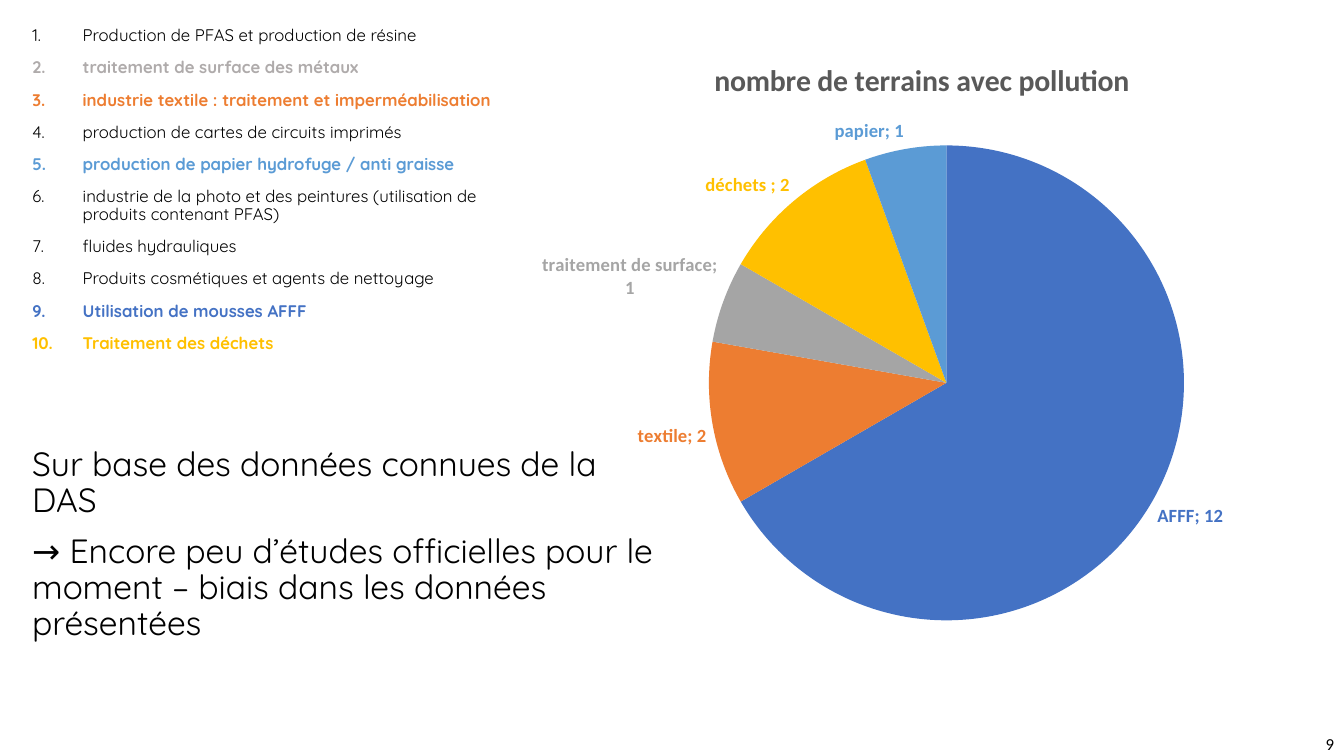
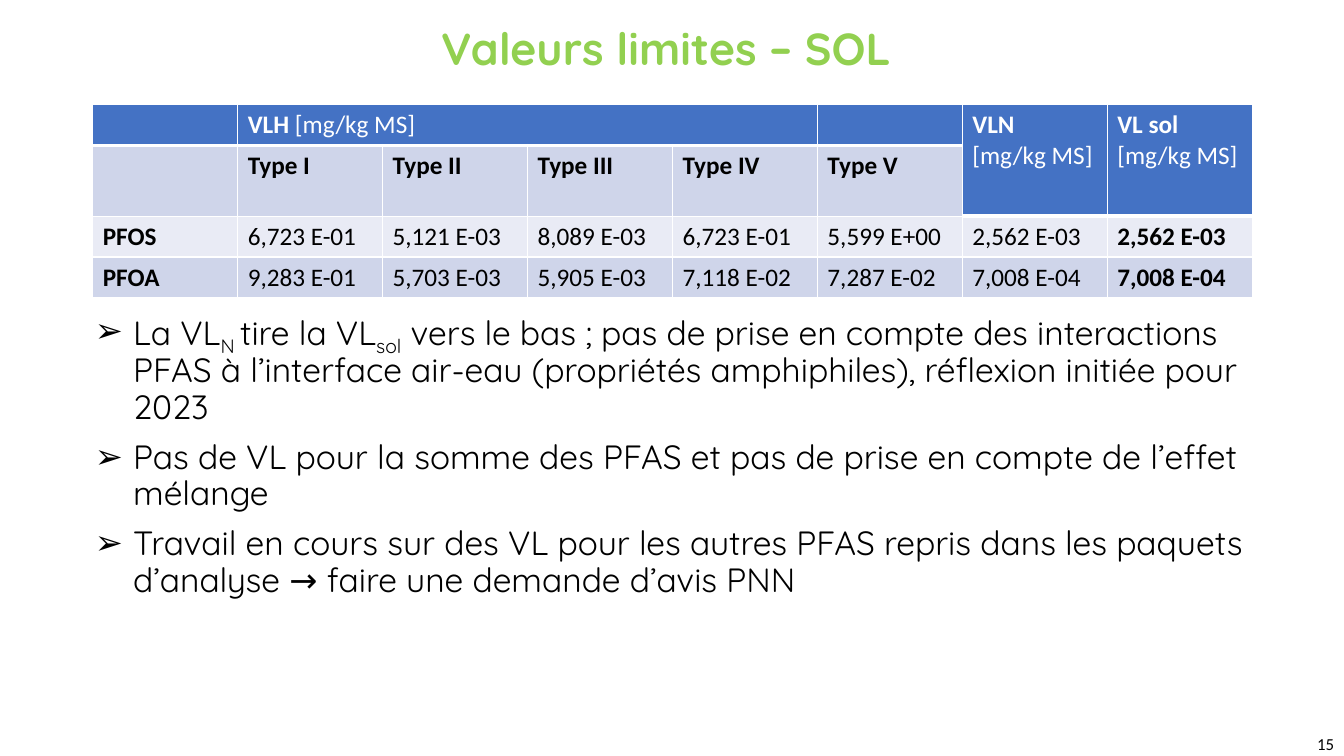
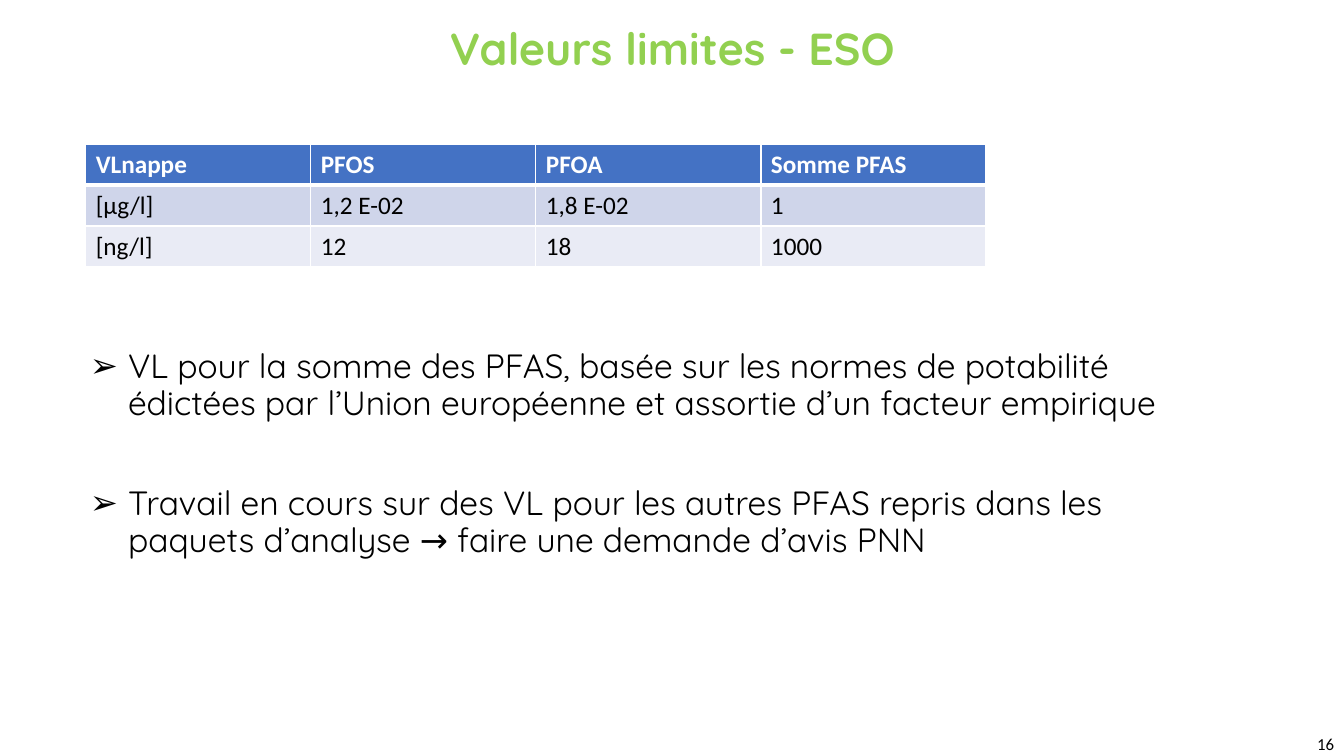
from dataclasses import dataclass

from lxml import etree
from pptx import Presentation
from pptx import util as u
from pptx.chart.data import CategoryChartData
from pptx.dml.color import RGBColor
from pptx.enum import chart as ch, text as tx
from pptx.oxml.ns import qn

HEADING_FONT = "Quicksand"
DATA_FONT = "Calibri"
BLACK, WHITE, GREEN = "000000", "FFFFFF", "92D050"
BLUE, ORANGE, GREY, YELLOW, SKY = "4472C4", "ED7D31", "A5A5A5", "FFC000", "5B9BD5"
TITLE_GREY, LIST_GREY = "595959", "AFABAB"
BAND_DARK, BAND_LIGHT = "CFD5EA", "E9EBF5"
ARROW_BULLET = "➢"


@dataclass(frozen=True)
class Box:
    left: float
    top: float
    width: float
    height: float

    def lengths(self) -> tuple:
        return tuple(u.Inches(v) for v in (self.left, self.top, self.width, self.height))


@dataclass(frozen=True)
class Activity:
    label: str
    color: str = BLACK


@dataclass(frozen=True)
class Sector:
    label: str
    sites: int
    color: str


@dataclass(frozen=True)
class Part:
    """A stretch of text, lowered when it is a subscript."""
    words: str
    subscript: bool = False


@dataclass(frozen=True)
class Heading:
    """A table heading with its unit in regular weight."""
    label: str = ""
    unit: str = ""
    stacked: bool = False


ACTIVITIES = [
    Activity("Production de PFAS et production de résine"),
    Activity("traitement de surface des métaux", LIST_GREY),
    Activity("industrie textile : traitement et imperméabilisation", ORANGE),
    Activity("production de cartes de circuits imprimés"),
    Activity("production de papier hydrofuge / anti graisse", SKY),
    Activity("industrie de la photo et des peintures (utilisation de produits contenant PFAS)"),
    Activity("fluides hydrauliques"),
    Activity("Produits cosmétiques et agents de nettoyage"),
    Activity("Utilisation de mousses AFFF", BLUE),
    Activity("Traitement des déchets", YELLOW),
]
SECTORS = [
    Sector("AFFF", 12, BLUE),
    Sector("textile", 2, ORANGE),
    Sector("traitement de surface", 1, GREY),
    Sector("déchets ", 2, YELLOW),
    Sector("papier", 1, SKY),
]
CHART_TITLE = "nombre de terrains avec pollution"
REMARKS = [
    "Sur base des données connues de la DAS",
    "→ Encore peu d’études officielles pour le moment – biais dans les données présentées",
]
UNIT = "[mg/kg MS]"
SOIL_HEADINGS = [Heading(), Heading("VLH", " " + UNIT), Heading(), Heading(), Heading(),
                 Heading(), Heading("VLN", UNIT, True), Heading("VL sol", UNIT, True)]
SOIL_ROWS = [
    ["", "Type I", "Type II", "Type III", "Type IV", "Type V", "", ""],
    ["PFOS", "6,723 E-01", "5,121 E-03", "8,089 E-03", "6,723 E-01", "5,599 E+00",
     "2,562 E-03", "2,562 E-03"],
    ["PFOA", "9,283 E-01", "5,703 E-03", "5,905 E-03", "7,118 E-02", "7,287 E-02",
     "7,008 E-04", "7,008 E-04"],
]
WATER_HEADINGS = [Heading(name) for name in ("VLnappe", "PFOS", "PFOA", "Somme PFAS")]
WATER_ROWS = [["[µg/l]", "1,2 E-02", "1,8 E-02", "1"], ["[ng/l]", "12", "18", "1000"]]

ONGOING_WORK = [Part("Travail en cours sur des VL pour les autres PFAS repris dans les paquets "
                     "d’analyse → faire une demande d’avis PNN")]
SOIL_POINTS = [
    [Part("La VL"), Part("N ", True), Part("tire la VL"), Part("sol", True),
     Part(" vers le bas ; pas de prise en compte des interactions PFAS à l’interface air-eau "
          "(propriétés amphiphiles), réflexion initiée pour 2023")],
    [Part("Pas de VL pour la somme des PFAS et pas de prise en compte de l’effet mélange")],
    ONGOING_WORK,
]
WATER_POINTS = [
    [Part("VL pour la somme des PFAS, basée sur les normes de potabilité édictées par "
          "l’Union européenne et assortie d’un facteur empirique")],
    ONGOING_WORK,
]


def rgb(color: str) -> RGBColor:
    return RGBColor.from_string(color)


def style_font(font, size: float, color: str, bold: bool = False, name: str = DATA_FONT) -> None:
    font.name, font.size, font.bold = name, u.Pt(size), bold
    font.color.rgb = rgb(color)


def place(shape, box: Box) -> None:
    shape.left, shape.top, shape.width, shape.height = box.lengths()


def space(paragraph, index: int, before: float = 10) -> None:
    paragraph.line_spacing = 0.9
    paragraph.space_before = u.Pt(before if index else 0)


def add_bullet(paragraph, hang: float, symbol: str = "") -> None:
    """Hang a symbol before the paragraph, or its number when no symbol is given."""
    props = paragraph._p.get_or_add_pPr()
    props.set("marL", str(u.Inches(hang)))
    props.set("indent", str(-u.Inches(hang)))
    if symbol:
        etree.SubElement(props, qn("a:buFont")).set("typeface", "Arial")
        etree.SubElement(props, qn("a:buChar")).set("char", symbol)
    else:
        etree.SubElement(props, qn("a:buFont")).set("typeface", "+mj-lt")
        etree.SubElement(props, qn("a:buAutoNum")).set("type", "arabicPeriod")


def paragraph_at(frame, index: int):
    return frame.add_paragraph() if index else frame.paragraphs[0]


def body_frame(slide, box: Box):
    body = slide.placeholders[1]
    place(body, box)
    body.text_frame.word_wrap = True
    body.text_frame.auto_size = tx.MSO_AUTO_SIZE.NONE
    return body.text_frame


def new_slide(deck, number: int, title: str = ""):
    slide = deck.slides.add_slide(deck.slide_layouts[1])
    heading = slide.shapes.title
    if title:
        place(heading, Box(0.92, 0.04, 11.5, 0.93))
        heading.text_frame.text = title
        heading.text_frame.auto_size = tx.MSO_AUTO_SIZE.NONE
        heading.text_frame.vertical_anchor = tx.MSO_ANCHOR.MIDDLE
        line = heading.text_frame.paragraphs[0]
        line.alignment = tx.PP_ALIGN.CENTER
        line.line_spacing = 0.9
        style_font(line.runs[0].font, 32, GREEN, True, HEADING_FONT)
    else:
        heading._element.getparent().remove(heading._element)
    page = slide.shapes.add_textbox(*Box(10.33, 7.23, 3, 0.3).lengths()).text_frame
    page.word_wrap = True
    page.vertical_anchor = tx.MSO_ANCHOR.MIDDLE
    page.text = str(number)
    page.paragraphs[0].alignment = tx.PP_ALIGN.RIGHT
    style_font(page.paragraphs[0].runs[0].font, 12, BLACK)
    return slide


def add_points(slide, box: Box, points: list[list[Part]], gap: float = 10) -> None:
    frame = body_frame(slide, box)
    for index, parts in enumerate(points):
        paragraph = paragraph_at(frame, index)
        add_bullet(paragraph, 0.38, ARROW_BULLET)
        space(paragraph, index, gap)
        for part in parts:
            run = paragraph.add_run()
            run.text = part.words
            style_font(run.font, 24, BLACK, name=HEADING_FONT)
            if part.subscript:
                run._r.get_or_add_rPr().set("baseline", "-25000")


def paint_cell(cell, fill: str, bottom: float, top: bool) -> None:
    """Fill a cell and rule its edges in white; the row above owns the top edge of body cells."""
    cell.fill.solid()
    cell.fill.fore_color.rgb = rgb(fill)
    edges = [("L", 1), ("R", 1)] + ([("T", 1)] if top else []) + [("B", bottom)]
    for position, (side, width) in enumerate(edges):
        edge = etree.Element(qn(f"a:ln{side}"), w=str(u.Pt(width)))
        paint = etree.SubElement(edge, qn("a:solidFill"))
        etree.SubElement(paint, qn("a:srgbClr")).set("val", WHITE)
        cell._tc.get_or_add_tcPr().insert(position, edge)


def write_heading(cell, heading: Heading) -> None:
    frame = cell.text_frame
    frame.text = heading.label
    for run in frame.paragraphs[0].runs:
        style_font(run.font, 18, WHITE, True)
    if heading.unit:
        paragraph = frame.add_paragraph() if heading.stacked else frame.paragraphs[0]
        unit = paragraph.add_run()
        unit.text = heading.unit
        style_font(unit.font, 18, WHITE)


def add_limits(slide, box: Box, headings: list[Heading], rows: list[list[str]], is_bold):
    table = slide.shapes.add_table(len(rows) + 1, len(headings), *box.lengths()).table
    for col, heading in enumerate(headings):
        write_heading(table.cell(0, col), heading)
        paint_cell(table.cell(0, col), BLUE, 3, True)
    for row, values in enumerate(rows, 1):
        for col, value in enumerate(values):
            cell = table.cell(row, col)
            under_heading = row == 1 and headings[col].stacked
            if under_heading:
                paint_cell(cell, BLUE, 3, True)
            else:
                paint_cell(cell, BAND_DARK if row % 2 else BAND_LIGHT, 1, False)
            cell.text_frame.text = value
            for run in cell.text_frame.paragraphs[0].runs:
                style_font(run.font, 18, BLACK, is_bold(row, col))
    return table


def set_layout(parent, position: int, **fractions: float) -> None:
    """Fix a chart part at fractions of the chart's size."""
    for old in parent.findall(qn("c:layout")):
        parent.remove(old)
    layout = etree.Element(qn("c:layout"))
    manual = etree.SubElement(layout, qn("c:manualLayout"))
    if "w" in fractions:
        etree.SubElement(manual, qn("c:layoutTarget")).set("val", "inner")
    for mode in ("xMode", "yMode"):
        etree.SubElement(manual, qn(f"c:{mode}")).set("val", "edge")
    for key, value in fractions.items():
        etree.SubElement(manual, qn(f"c:{key}")).set("val", str(value))
    parent.insert(position, layout)


def add_sector_pie(slide, box: Box) -> None:
    data = CategoryChartData()
    data.categories = [sector.label for sector in SECTORS]
    data.add_series(CHART_TITLE, [sector.sites for sector in SECTORS])
    chart = slide.shapes.add_chart(ch.XL_CHART_TYPE.PIE, *box.lengths(), data).chart
    style_font(chart.font, 10, BLACK)
    chart.has_legend = False
    chart.has_title = True
    title = chart.chart_title
    title.text_frame.text = CHART_TITLE
    style_font(title.text_frame.paragraphs[0].runs[0].font, 21.3, TITLE_GREY, True)
    set_layout(title._element, 1, x=0.26, y=0.03)

    plot = chart.plots[0]
    plot.vary_by_categories = True
    series = plot.series[0]
    series.data_labels.show_value = True
    series.data_labels.show_category_name = True
    series.data_labels.position = ch.XL_LABEL_POSITION.OUTSIDE_END
    for index, sector in enumerate(SECTORS):
        point = series.points[index]
        point.format.fill.solid()
        point.format.fill.fore_color.rgb = rgb(sector.color)
        style_font(point.data_label.font, 13.3, sector.color, True)
        point.data_label.position = ch.XL_LABEL_POSITION.OUTSIDE_END
    chart_space = chart._chartSpace
    for flag in chart_space.xpath(".//c:dLbl/c:showCatName"):
        flag.set("val", "1")
    # The no-break space keeps each value on the line of its category.
    for flag in chart_space.xpath(".//c:ser//c:showBubbleSize"):
        separator = etree.Element(qn("c:separator"))
        separator.text = "; "
        flag.addnext(separator)
    set_layout(chart_space.xpath(".//c:plotArea")[0], 0, x=0.26, y=0.18, w=0.53, h=0.8)


def build_sources(deck) -> None:
    slide = new_slide(deck, 9)
    activities = body_frame(slide, Box(0.22, 0.22, 4.78, 3.83))
    for index, activity in enumerate(ACTIVITIES):
        paragraph = paragraph_at(activities, index)
        paragraph.text = activity.label
        add_bullet(paragraph, 0.5)
        space(paragraph, index)
        style_font(paragraph.runs[0].font, 12, activity.color,
                   activity.color != BLACK, HEADING_FONT)
    add_sector_pie(slide, Box(4.72, 0.36, 8.89, 5.93))
    remarks = slide.shapes.add_textbox(*Box(0.22, 4.39, 6.45, 2.1).lengths()).text_frame
    remarks.word_wrap = True
    for index, remark in enumerate(REMARKS):
        paragraph = paragraph_at(remarks, index)
        paragraph.text = remark
        space(paragraph, index)
        style_font(paragraph.runs[0].font, 24, BLACK, name=HEADING_FONT)


def build_soil(deck) -> None:
    slide = new_slide(deck, 15, "Valeurs limites – SOL ")
    last = len(SOIL_HEADINGS) - 1
    table = add_limits(slide, Box(0.92, 1.04, 11.5, 1.62), SOIL_HEADINGS, SOIL_ROWS,
                       lambda row, col: row == 1 or col in (0, last))
    table.cell(0, 1).merge(table.cell(0, 4))
    for col, heading in enumerate(SOIL_HEADINGS):
        if heading.stacked:
            table.cell(0, col).merge(table.cell(1, col))
    add_points(slide, Box(0.84, 3.05, 11.81, 3.07), SOIL_POINTS)


def build_groundwater(deck) -> None:
    slide = new_slide(deck, 16, "Valeurs limites - ESO")
    add_limits(slide, Box(0.85, 1.43, 8.93, 1.22), WATER_HEADINGS, WATER_ROWS,
               lambda row, col: False)
    add_points(slide, Box(0.79, 3.42, 11.5, 3.25), WATER_POINTS, gap=46)


def main() -> None:
    deck = Presentation()
    deck.slide_width, deck.slide_height = u.Inches(13.33), u.Inches(7.5)
    build_sources(deck)
    build_soil(deck)
    build_groundwater(deck)
    deck.save("out.pptx")


if __name__ == "__main__":
    main()
